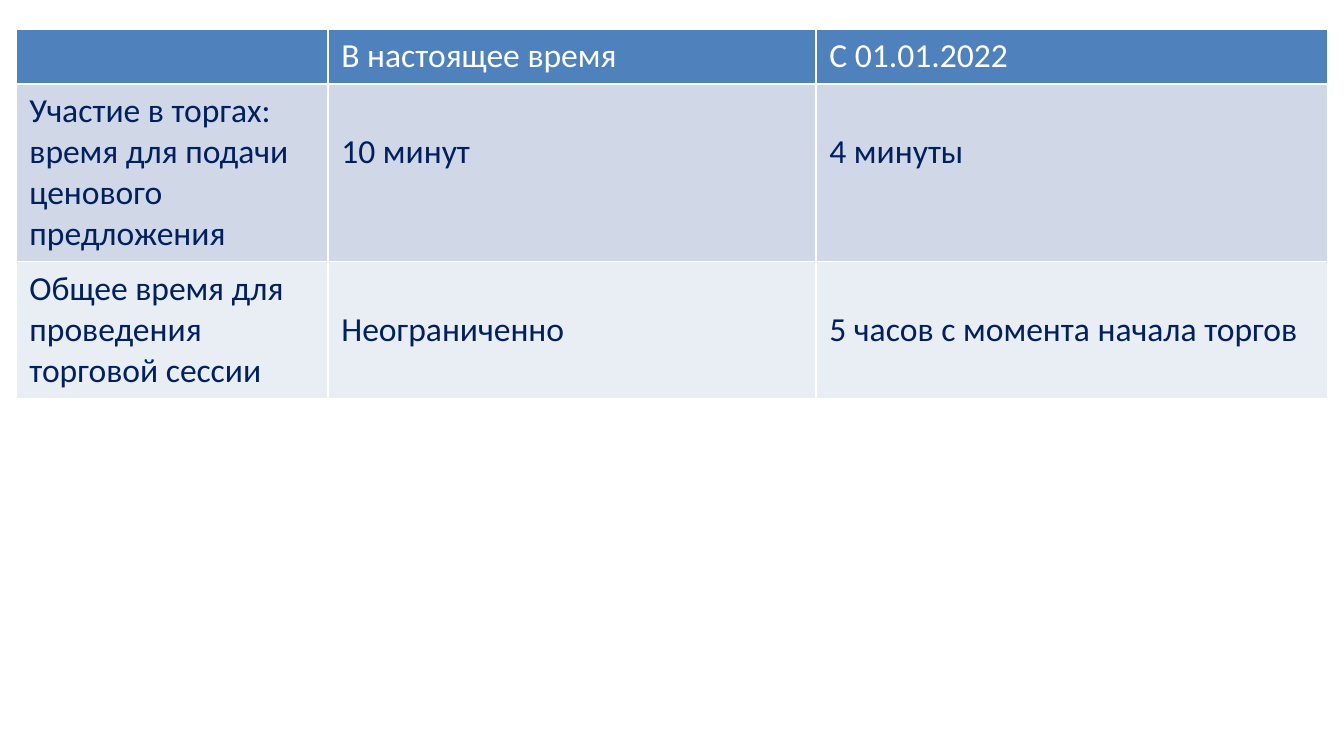
from lxml import etree
from pptx import Presentation
from pptx.dml.color import RGBColor
from pptx.oxml.ns import qn
from pptx.util import Emu, Pt

SCALE = 914400 / 134.4
FONT = "Calibri"
COLORS = {
    "head": "4F81BD",
    "odd": "D0D8E8",
    "even": "E9EDF4",
    "white": "FFFFFF",
    "navy": "002060",
}
BANDS = ["head", "odd", "even"]
COLS = [312, 488, 512]
ROWS = [54, 178, 135]
PAD = 7
LINE = 41  # height of one text line
TEXTS = [
    ["", "В настоящее время", "С 01.01.2022"],
    ["Участие в торгах: время для подачи ценового предложения",
     "10 минут", "4 минуты"],
    ["Общее время для проведения торговой сессии",
     "Неограниченно", "5 часов с момента начала торгов"],
]


def px(num):
    return Emu(round(num * SCALE))


def rgb(name):
    return RGBColor.from_string(COLORS[name])


def add_edges(cell):
    props = cell._tc.get_or_add_tcPr()
    for side in ("lnL", "lnR", "lnT", "lnB"):
        edge = etree.SubElement(props, qn("a:" + side), w=str(Pt(1)))
        fill = etree.SubElement(edge, qn("a:solidFill"))
        etree.SubElement(fill, qn("a:srgbClr"), val=COLORS["white"])


def fill_cell(cell, text, band, color, top):
    add_edges(cell)
    cell.fill.solid()
    cell.fill.fore_color.rgb = rgb(band)
    cell.margin_top = px(top)
    cell.text_frame.text = text
    font = cell.text_frame.paragraphs[0].font
    font.size = Pt(18)
    for run in cell.text_frame.paragraphs[0].runs:
        run.font.name = FONT
        run.font.size = Pt(18)
        run.font.bold = False
        run.font.color.rgb = rgb(color)


def add_grid(slide, left, top):
    frame = slide.shapes.add_table(len(ROWS), len(COLS), px(left), px(top),
                                   px(sum(COLS)), px(sum(ROWS)))
    table = frame.table
    table.first_row = False
    table.horz_banding = False
    for col, width in zip(table.columns, COLS):
        col.width = px(width)
    for row, height in zip(table.rows, ROWS):
        row.height = px(height)
    for r, line in enumerate(TEXTS):
        for c, text in enumerate(line):
            # Values start one line below their row's label
            drop = LINE if r and c else 0
            fill_cell(table.cell(r, c), text, BANDS[r],
                      "navy" if r else "white", PAD + drop)


def main():
    deck = Presentation()
    deck.slide_width, deck.slide_height = px(1344), px(756)
    slide = deck.slides.add_slide(deck.slide_layouts[6])
    # Comparison of trading times
    add_grid(slide, 16, 29)
    deck.save("out.pptx")


if __name__ == "__main__":
    main()
